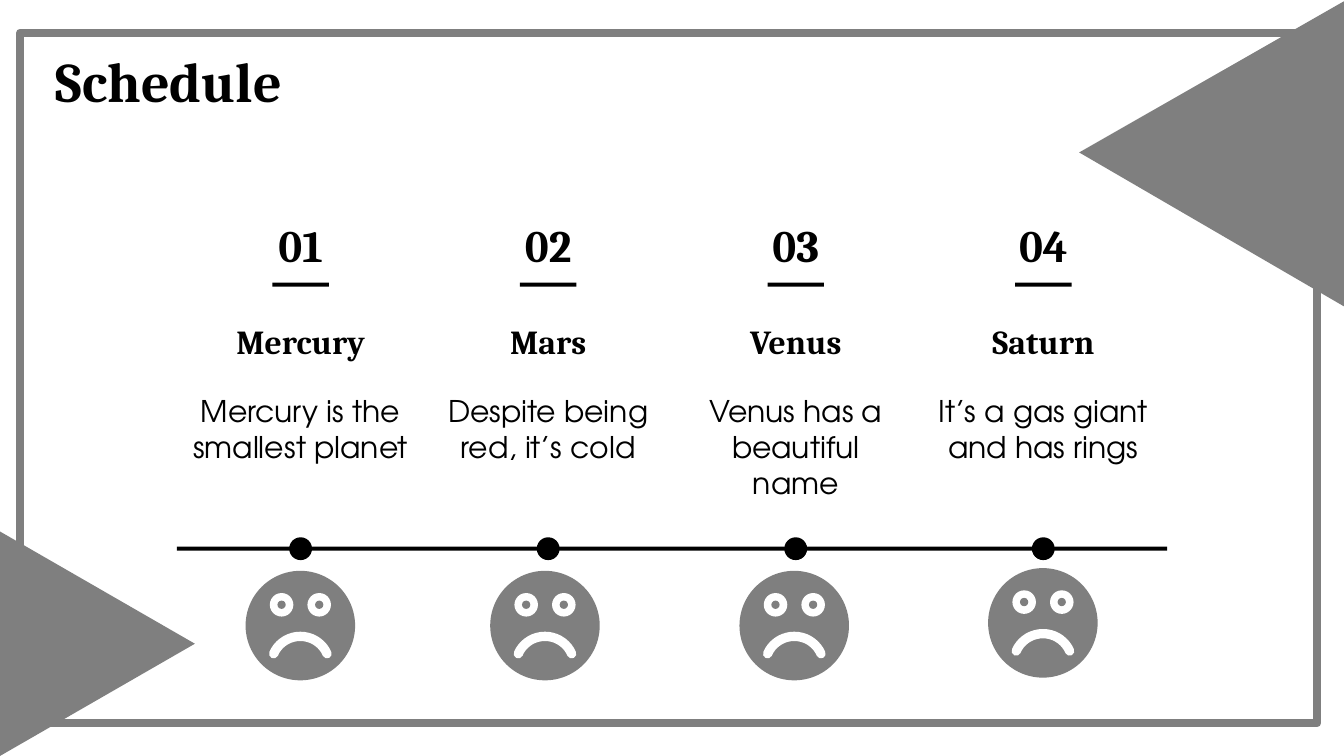
from math import cos, pi, sin

from pptx import Presentation
from pptx.dml.color import RGBColor
from pptx.enum.shapes import MSO_SHAPE as Shape
from pptx.enum.text import MSO_ANCHOR as Anchor, PP_ALIGN as Align
from pptx.oxml.ns import qn
from pptx.util import Inches, Pt

COLUMNS, ROWS = 100, 56.25
CELL = Inches(0.1)
STOPS = [
    ("01", "Mercury", "Mercury is the smallest planet", 22.35, 46.55),
    ("02", "Mars", "Despite being red, it’s cold", 40.55, 46.55),
    ("03", "Venus", "Venus has a beautiful name", 59.1, 46.55),
    ("04", "Saturn", "It’s a gas giant and has rings", 77.6, 46.35),
]


def color(value):
    return RGBColor.from_string(value)


def grid(*cells):
    return [round(cell * CELL) for cell in cells]


class SlideBuilder:
    black, gray, white = "000000", "7F7F7F", "FFFFFF"
    heading_font, body_font = "Cambria", "TeX Gyre Adventor"

    def __init__(self, page):
        self.page = page

    def paint(self, shape, fill=None, line=None, weight=0):
        shape.shadow.inherit = False
        if fill:
            shape.fill.solid()
            shape.fill.fore_color.rgb = color(fill)
        else:
            shape.fill.background()
        if line:
            shape.line.color.rgb = color(line)
            shape.line.width = Pt(weight)
        else:
            shape.line.fill.background()
        return shape

    def bar(self, left, top, width, height, **style):
        box = self.page.shapes.add_shape(Shape.RECTANGLE, *grid(left, top, width, height))
        return self.paint(box, **style)

    def disc(self, x, y, size, fill):
        box = grid(x - size / 2, y - size / 2, size, size)
        return self.paint(self.page.shapes.add_shape(Shape.OVAL, *box), fill)

    def outline(self, points, closed=True, **style):
        corners = [grid(*point) for point in points]
        builder = self.page.shapes.build_freeform(*corners[0])
        builder.add_line_segments(corners[1:], close=closed)
        return self.paint(builder.convert_to_shape(), **style)

    def text(self, words, left, top, width, height, size, heading=True, align=Align.CENTER):
        box = self.page.shapes.add_textbox(*grid(left, top, width, height))
        frame = box.text_frame
        frame.word_wrap = True
        frame.vertical_anchor = Anchor.TOP
        frame.margin_left = frame.margin_right = CELL
        frame.margin_top = frame.margin_bottom = CELL
        para = frame.paragraphs[0]
        para.text = words
        para.alignment = align
        para.font.name = self.heading_font if heading else self.body_font
        para.font.size = Pt(size)
        para.font.bold = heading
        para.font.color.rgb = color(self.black)

    def sad_face(self, x, y):
        self.disc(x, y, 8.15, self.gray)
        for side in (-1.4, 1.4):
            self.disc(x + side, y - 1.55, 1.75, self.white)
            self.disc(x + side, y - 1.55, 0.62, self.gray)
        angles = [pi * step / 24 for step in range(3, 22)]
        curve = [(x - 2.15 * cos(angle), y + 2.9 - 2.1 * sin(angle)) for angle in angles]
        mouth = self.outline(curve, closed=False, line=self.white, weight=5)
        mouth.element.spPr.find(qn("a:ln")).set("cap", "rnd")


def main():
    deck = Presentation()
    deck.slide_width, deck.slide_height = grid(COLUMNS, ROWS)
    slide = SlideBuilder(deck.slides.add_slide(deck.slide_layouts[6]))

    slide.bar(1.5, 2.45, 96.5, 51.35, line=slide.gray, weight=4.5)
    slide.text("Schedule", 3.15, 2.45, 44.2, 12.7, 30, align=Align.LEFT)

    start, pitch = 13.16, 18.42
    slide.bar(start, 40.68, 4 * pitch, 0.3, fill=slide.black)
    for index, (number, planet, fact, face_x, face_y) in enumerate(STOPS):
        left = start + index * pitch
        center = left + pitch / 2
        slide.text(number, center - 3.55, 15.2, 7.1, 8.5, 24)
        slide.bar(center - 2.1, 21.03, 4.2, 0.3, fill=slide.black)
        slide.text(planet, left, 22.9, pitch, 3.7, 18)
        slide.text(fact, left, 28.24, pitch, 7.1, 16, heading=False)
        slide.disc(center, 40.83, 1.7, slide.black)
        slide.sad_face(face_x, face_y)

    slide.outline([(80.3, 11.35), (COLUMNS, 0.1), (COLUMNS, 22.8)], fill=slide.gray)
    slide.outline([(0, 39.55), (14.5, 47.9), (0, ROWS)], fill=slide.gray)
    deck.save("out.pptx")


if __name__ == "__main__":
    main()
